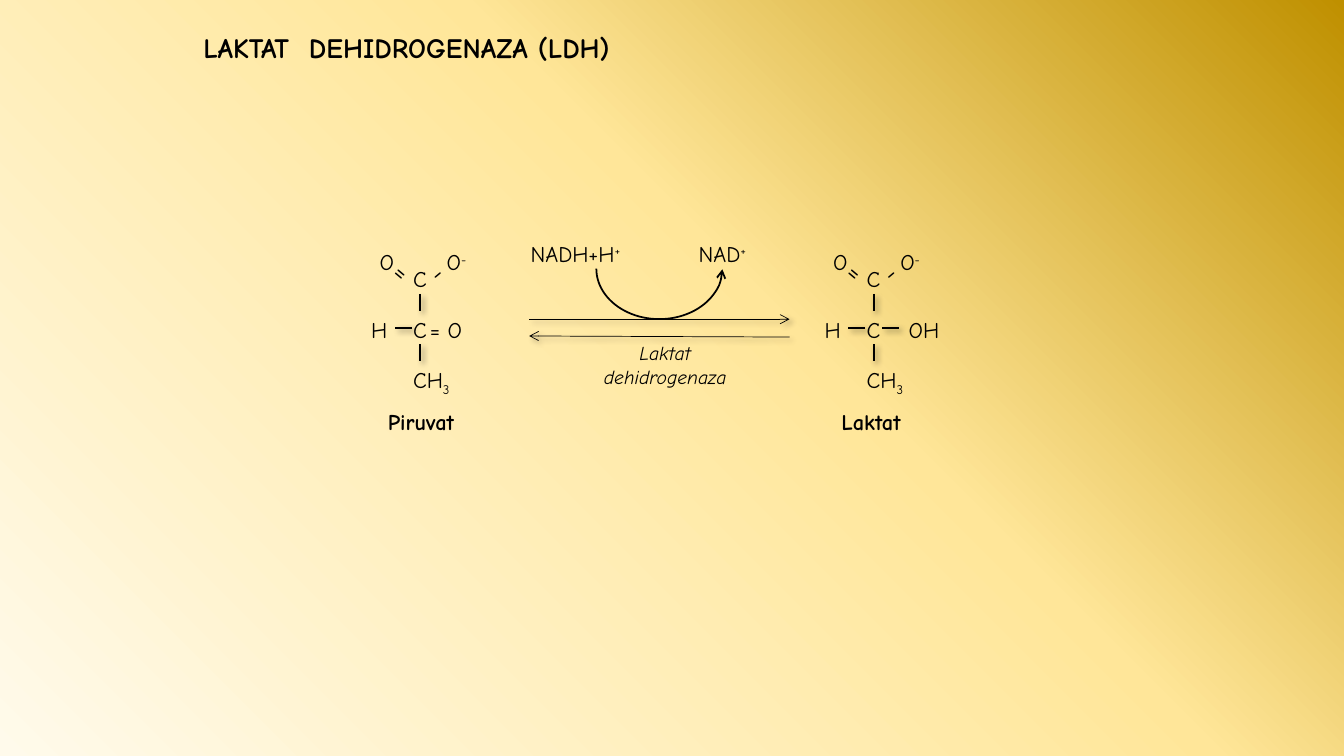
from copy import deepcopy

from lxml import etree
from pptx import Presentation
from pptx.dml.color import RGBColor
from pptx.enum.shapes import MSO_CONNECTOR, MSO_SHAPE
from pptx.enum.text import MSO_ANCHOR, MSO_AUTO_SIZE, PP_ALIGN
from pptx.oxml.ns import qn
from pptx.util import Pt

EMU_PER_PX = 9525
FONT = "Comic Neue"
BLACK = RGBColor(0x00, 0x00, 0x00)
CREAM = RGBColor(0xFF, 0xFA, 0xEB)
YELLOW = RGBColor(0xFF, 0xE6, 0x99)
GOLD = RGBColor(0xBF, 0x90, 0x00)
STRAIGHT = MSO_CONNECTOR.STRAIGHT
ARC = MSO_SHAPE.ARC
GROW = MSO_AUTO_SIZE.SHAPE_TO_FIT_TEXT
TOP = MSO_ANCHOR.TOP
LEFT = PP_ALIGN.LEFT
CENTER = PP_ALIGN.CENTER
SUPERSCRIPT = 30000
SUBSCRIPT = -25000


def px(*lengths):
    return [length * EMU_PER_PX for length in lengths]


class ReactionSlide:
    def __init__(self, deck):
        self.page = deck.slides.add_slide(deck.slide_layouts[5])
        self.canvas = self.page.shapes

    def background(self, stops, angle):
        fill = self.page.background.fill
        fill.gradient()
        stop_list = next(self.page.element.iter(qn("a:gsLst")))
        while len(stop_list) < len(stops):
            stop_list.append(deepcopy(stop_list[-1]))
        for stop, (position, color) in zip(fill.gradient_stops, stops):
            stop.position = position
            stop.color.rgb = color
        fill.gradient_angle = angle

    def format_text(self, box, size, align=LEFT, bold=False, italic=False):
        frame = box.text_frame
        frame.auto_size = GROW
        frame.vertical_anchor = TOP
        for para in frame.paragraphs:
            para.alignment = align
            for span in para.runs:
                span.font.name = FONT
                span.font.size = Pt(size)
                span.font.color.rgb = BLACK
                span.font.bold = bold
                span.font.italic = italic

    def title(self, text, left, top, width, height):
        box = self.page.shapes.title
        box.left, box.top, box.width, box.height = px(left, top, width, height)
        box.text_frame.text = text
        box.text_frame.word_wrap = True
        self.format_text(box, 20, bold=True)

    def label(self, text, left, top, width, height=35, size=16, script="",
              baseline=SUPERSCRIPT, rotation=0, **style):
        box = self.canvas.add_textbox(*px(left, top, width, height))
        box.text_frame.text = text
        box.text_frame.word_wrap = False
        if script:
            box.text_frame.paragraphs[0].add_run().text = script
        self.format_text(box, size, **style)
        if script:
            list(box.element.iter(qn("a:rPr")))[-1].set("baseline", str(baseline))
        box.rotation = rotation

    def arrowhead(self, shape, end):
        outline = next(shape.element.iter(qn("a:ln")))
        etree.SubElement(outline, qn(f"a:{end}"), type="arrow")

    def line(self, start, finish, weight=1.5, arrow=None):
        connector = self.canvas.add_connector(STRAIGHT, *px(*start, *finish))
        connector.line.color.rgb = BLACK
        connector.line.width = Pt(weight)
        if arrow:
            self.arrowhead(connector, arrow)
        properties = next(connector.element.iter(qn("p:spPr")))
        effects = etree.SubElement(properties, qn("a:effectLst"))
        shadow = etree.SubElement(effects, qn("a:outerShdw"), blurRad="50800",
                                  dist="38100", dir="2700000", algn="tl", rotWithShape="0")
        color = etree.SubElement(shadow, qn("a:srgbClr"), val=str(BLACK))
        etree.SubElement(color, qn("a:alpha"), val="40000")

    def arc(self, left, top, width, height):
        curve = self.canvas.add_shape(ARC, *px(left, top, width, height))
        curve.adjustments[0] = 0.298
        curve.adjustments[1] = 108.09
        curve.shadow.inherit = False
        curve.fill.background()
        curve.line.color.rgb = BLACK
        curve.line.width = Pt(1.25)
        self.arrowhead(curve, "headEnd")

    def molecule(self, axis, name, name_width):
        self.canvas = self.page.shapes.add_group_shape().shapes
        for bond_top in (280, 328):
            self.line((axis, bond_top), (axis, bond_top + 16))
        self.line((axis - 8, 312), (axis - 24, 312))
        for carbon_top in (248, 296):
            self.label("C", axis - 16, carbon_top, 33)
        self.label("CH", axis - 16, 344, 58, script="3", baseline=SUBSCRIPT)
        self.label("H", axis - 56, 296, 36)
        self.label("O", axis - 48, 232, 36)
        self.label("O", axis + 16, 232, 42, script="-")
        self.label("=", axis - 32, 240, 32, 38, size=18, rotation=40)
        self.label("-", axis, 240, 30, 38, size=18, rotation=-40)
        self.label(name, axis - 40, 384, name_width, bold=True)
        self.canvas = self.page.shapes


def main():
    deck = Presentation()
    deck.slide_width, deck.slide_height = px(1280, 720)
    slide = ReactionSlide(deck)
    slide.background([(0, CREAM), (0.58, YELLOW), (1, GOLD)], 45)
    slide.title("LAKTAT  DEHIDROGENAZA (LDH)", 184, 24, 480, 42)

    pyruvate_axis, lactate_axis = 400, 832
    slide.molecule(pyruvate_axis, "Piruvat", 91)
    slide.label("= O", pyruvate_axis, 296, 54)
    slide.molecule(lactate_axis, "Laktat", 87)
    slide.label("OH", lactate_axis + 24, 296, 53)
    slide.line((lactate_axis + 24, 312), (lactate_axis + 8, 312))

    slide.line((504, 304), (752, 304), 0.5, "tailEnd")
    slide.line((504, 320), (752, 321), 0.5, "headEnd")
    slide.label("NADH+H", 496, 224, 122, script="+")
    slide.label("NAD", 656, 224, 75, script="+")
    slide.label("Laktat\ndehidrogenaza", 560, 320, 147, 55, size=14,
                align=CENTER, italic=True)
    slide.arc(568, 208, 120, 96)
    deck.save("out.pptx")


if __name__ == "__main__":
    main()
